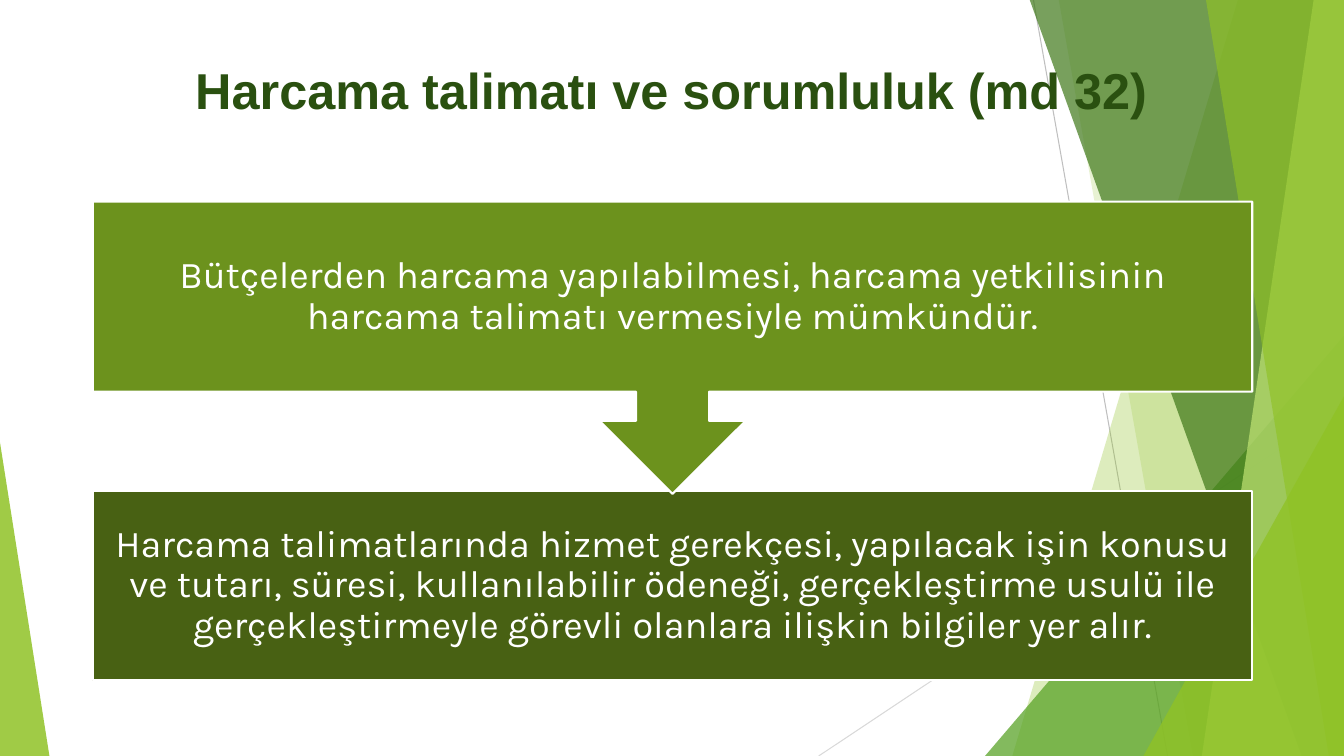
from dataclasses import dataclass

from lxml import etree
from pptx import Presentation
from pptx.dml.color import RGBColor
from pptx.enum.shapes import MSO_CONNECTOR, MSO_SHAPE
from pptx.enum.text import MSO_ANCHOR, PP_ALIGN
from pptx.oxml.ns import qn
from pptx.util import Inches, Pt

STRAIGHT = MSO_CONNECTOR.STRAIGHT
TRIANGLE = MSO_SHAPE.ISOSCELES_TRIANGLE
RECTANGLE = MSO_SHAPE.RECTANGLE
CALLOUT = MSO_SHAPE.UP_ARROW_CALLOUT
CENTER = PP_ALIGN.CENTER
TOP = MSO_ANCHOR.TOP
MIDDLE = MSO_ANCHOR.MIDDLE

SLIDE_WIDTH, SLIDE_HEIGHT = 13.33, 7.5
BAND_TOP = -0.01
BOX_LEFT, BOX_WIDTH, BOX_HEIGHT = 0.92, 11.5, 1.88
FIRST_TOP, SECOND_TOP, CALLOUT_HEIGHT = 2, 4.87, 2.9


@dataclass(frozen=True)
class Theme:
    lime: str = "90C226"
    green: str = "54A021"
    forest: str = "3F7819"
    pale: str = "C0E474"
    title: str = "2A5010"
    first_box: str = "6C921D"
    second_box: str = "486113"
    white: str = "FFFFFF"
    gray: str = "BFBFBF"
    light_gray: str = "D9D9D9"
    title_font: str = "Arial"
    body_font: str = "Karla"
    title_size: int = 36
    body_size: int = 27
    hairline: float = 0.75
    outline: float = 1.5


THEME = Theme()


def fill_shape(shape, color, opacity=100):
    shape.shadow.inherit = False
    shape.fill.solid()
    shape.fill.fore_color.rgb = RGBColor.from_string(color)
    shape.line.fill.background()
    if opacity < 100:
        color_element = shape.fill._xPr.find(qn("a:solidFill"))[0]
        etree.SubElement(color_element, qn("a:alpha"), val=str(opacity * 1000))


def add_hairline(slide, start, end, color):
    line = slide.shapes.add_connector(
        STRAIGHT, *(Inches(value) for value in (*start, *end)))
    line.line.color.rgb = RGBColor.from_string(color)
    line.line.width = Pt(THEME.hairline)
    etree.SubElement(line._element.spPr, qn("a:effectLst"))


def add_band(slide, top_left, bottom_left, color, opacity):
    corners = [(top_left, BAND_TOP), (SLIDE_WIDTH, BAND_TOP),
               (SLIDE_WIDTH, SLIDE_HEIGHT), (bottom_left, SLIDE_HEIGHT)]
    points = [(Inches(x), Inches(y)) for x, y in corners]
    builder = slide.shapes.build_freeform(*points[0])
    builder.add_line_segments(points[1:], close=True)
    fill_shape(builder.convert_to_shape(), color, opacity)


def add_triangle(slide, left, top, width, apex, color, opacity):
    triangle = slide.shapes.add_shape(
        TRIANGLE, Inches(left), Inches(top), Inches(width), Inches(SLIDE_HEIGHT - top))
    triangle.adjustments[0] = apex
    fill_shape(triangle, color, opacity)


def add_box(slide, kind, top, height, color, rotation=0):
    box = slide.shapes.add_shape(
        kind, Inches(BOX_LEFT), Inches(top), Inches(BOX_WIDTH), Inches(height))
    box.rotation = rotation
    fill_shape(box, color)
    box.line.color.rgb = RGBColor.from_string(THEME.white)
    box.line.width = Pt(THEME.outline)


def add_text(slide, place, text, font, size, color, bold=False, anchor=TOP, spacing=1.0):
    text_box = slide.shapes.add_textbox(*(Inches(value) for value in place))
    frame = text_box.text_frame
    frame.word_wrap = True
    frame.vertical_anchor = anchor
    paragraph = frame.paragraphs[0]
    paragraph.text = text
    paragraph.alignment = CENTER
    paragraph.line_spacing = spacing
    paragraph.font.name = font
    paragraph.font.size = Pt(size)
    paragraph.font.bold = bold
    paragraph.font.color.rgb = RGBColor.from_string(color)
    return frame


def add_box_text(slide, top, text):
    frame = add_text(slide, (BOX_LEFT, top, BOX_WIDTH, BOX_HEIGHT), text, THEME.body_font,
                     THEME.body_size, THEME.white, anchor=MIDDLE, spacing=0.9)
    frame.margin_left = frame.margin_right = Inches(0.21)
    frame.margin_top = frame.margin_bottom = Inches(0.21)


def add_backdrop(slide):
    add_hairline(slide, (10.25, 0), (11.58, SLIDE_HEIGHT), THEME.gray)
    add_hairline(slide, (SLIDE_WIDTH, 4.03), (8.12, SLIDE_HEIGHT), THEME.light_gray)
    add_band(slide, 12.28, 10.04, THEME.lime, 30)
    add_band(slide, 10.5, 11.83, THEME.lime, 20)
    add_triangle(slide, 9.77, 3.33, 3.56, 1, THEME.green, 72)
    add_band(slide, 10.21, 12.91, THEME.forest, 70)
    add_band(slide, 13.03, 11.92, THEME.pale, 70)
    add_band(slide, 11.96, 13.18, THEME.lime, 65)
    add_triangle(slide, 11.34, 3.93, 1.99, 1, THEME.lime, 80)
    add_triangle(slide, 0, 4.39, 0.49, 0, THEME.lime, 85)


def main():
    presentation = Presentation()
    presentation.slide_width = Inches(SLIDE_WIDTH)
    presentation.slide_height = Inches(SLIDE_HEIGHT)
    slide = presentation.slides.add_slide(presentation.slide_layouts[6])

    add_backdrop(slide)
    add_text(slide, (1.35, 0.54, 10.62, 0.96), "Harcama talimatı ve sorumluluk (md 32)",
             THEME.title_font, THEME.title_size, THEME.title, bold=True)
    add_box(slide, RECTANGLE, SECOND_TOP, BOX_HEIGHT, THEME.second_box)
    add_box_text(slide, SECOND_TOP,
                 "Harcama talimatlarında hizmet gerekçesi, yapılacak işin konusu ve tutarı, "
                 "süresi, kullanılabilir ödeneği, gerçekleştirme usulü ile gerçekleştirmeyle "
                 "görevli olanlara ilişkin bilgiler yer alır.")
    add_box(slide, CALLOUT, FIRST_TOP, CALLOUT_HEIGHT, THEME.first_box, rotation=180)
    add_box_text(slide, FIRST_TOP,
                 "Bütçelerden harcama yapılabilmesi, harcama yetkilisinin harcama talimatı "
                 "vermesiyle mümkündür.")

    presentation.save("out.pptx")


if __name__ == "__main__":
    main()
